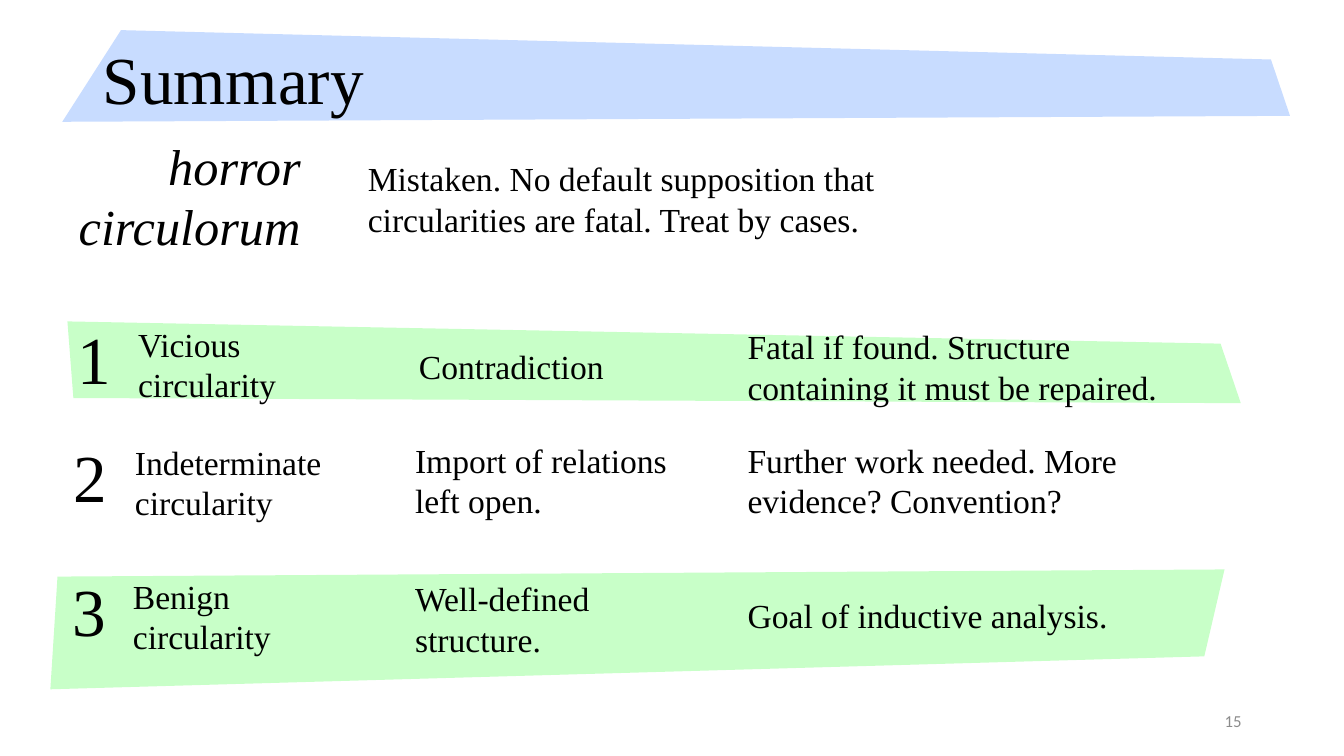
"""Build the summary slide on three kinds of circularity."""
from pptx import Presentation
from pptx.dml.color import RGBColor
from pptx.enum.text import MSO_ANCHOR, MSO_AUTO_SIZE, PP_ALIGN
from pptx.util import Cm, Pt

LEFT, RIGHT = PP_ALIGN.LEFT, PP_ALIGN.RIGHT
TOP, MIDDLE = MSO_ANCHOR.TOP, MSO_ANCHOR.MIDDLE
GROW, FIXED = MSO_AUTO_SIZE.SHAPE_TO_FIT_TEXT, MSO_AUTO_SIZE.NONE
COLOURS = {"header": "C8DCFF", "band": "C8FFC8", "text": "000000", "page": "8C8C8C"}
SERIF, SANS = "Times New Roman", "Calibri"

HEADER = [(3.05, 0.76), (32.03, 1.5), (32.51, 2.92), (1.57, 3.07)]
TITLE = ("Summary", (2.34, 1.02, 21.59, 2.13))
PAGE_NUMBER = ("15", (29.74, 17.65, 1.8, 1.02))
TOPIC = ("horror circulorum", (0.46, 3.28, 7.37, 3.33))
VERDICT = ("Mistaken. No default supposition that circularities are fatal. Treat by cases.",
           (9.02, 3.86, 15.85, 2.31))
CASES = [
    {"band": [(1.7, 8.1), (30.76, 8.66), (31.27, 10.16), (1.85, 10.03)],
     "number": ("1", (1.7, 7.87, 1.37, 2.31)),
     "cells": [("Vicious circularity", (3.23, 8.03, 4.95, 2.31)),
               ("Contradiction", (10.31, 8.59, 5.21, 1.27)),
               ("Fatal if found. Structure containing it must be repaired.",
                (18.59, 8.1, 12.04, 2.31))]},
    {"band": [],
     "number": ("2", (1.6, 10.85, 1.37, 2.31)),
     "cells": [("Indeterminate circularity", (3.15, 11, 5.54, 2.31)),
               ("Import of relations left open.", (10.21, 10.95, 7.19, 2.31)),
               ("Further work needed. More evidence? Convention?",
                (18.59, 10.95, 11.63, 2.31))]},
    {"band": [(1.27, 17.37), (30.35, 16.54), (30.86, 14.35), (1.45, 14.53)],
     "number": ("3", (1.57, 14.22, 1.37, 2.31)),
     "cells": [("Benign circularity", (3.1, 14.38, 5.54, 2.31)),
               ("Well-defined structure.", (10.21, 14.45, 7.19, 2.31)),
               ("Goal of inductive analysis.", (18.59, 14.86, 11.63, 1.27))]},
]


def set_all(target, values):
    for name, value in values.items():
        setattr(target, name, value)


def add_band(shapes, corners, colour):
    points = [(Cm(x), Cm(y)) for x, y in corners]
    builder = shapes.build_freeform(*points[0])
    builder.add_line_segments(points[1:], close=True)
    band = builder.convert_to_shape()
    band.shadow.inherit = False
    band.fill.solid()
    band.fill.fore_color.rgb = RGBColor.from_string(COLOURS[colour])
    band.line.fill.background()


def add_text(shapes, content, size=24, font=SERIF, colour="text", italic=False,
             align=LEFT, anchor=TOP, wrap=True, fit=GROW, spacing=1.0):
    text, place = content
    box = shapes.add_textbox(*map(Cm, place))
    set_all(box.text_frame, {"word_wrap": wrap, "auto_size": fit, "vertical_anchor": anchor})
    para = box.text_frame.paragraphs[0]
    set_all(para, {"alignment": align, "line_spacing": spacing})
    span = para.add_run()
    span.text = text
    set_all(span.font, {"name": font, "size": Pt(size), "italic": italic})
    span.font.color.rgb = RGBColor.from_string(COLOURS[colour])


def add_case(page, case):
    shapes = page.shapes.add_group_shape().shapes
    if case["band"]:
        add_band(shapes, case["band"], "band")
    add_text(shapes, case["number"], size=48, wrap=False)
    for cell in case["cells"]:
        add_text(shapes, cell)


def main():
    deck = Presentation()
    set_all(deck, {"slide_width": Cm(33.87), "slide_height": Cm(19.05)})
    page = deck.slides.add_slide(deck.slide_layouts[6])
    add_band(page.shapes, HEADER, "header")
    add_text(page.shapes, TITLE, size=48, anchor=MIDDLE, fit=FIXED, spacing=0.9)
    add_text(page.shapes, PAGE_NUMBER, size=12, font=SANS, colour="page",
             align=RIGHT, anchor=MIDDLE, fit=FIXED)
    add_text(page.shapes, TOPIC, size=36, italic=True, align=RIGHT)
    add_text(page.shapes, VERDICT)
    for case in CASES:
        add_case(page, case)
    deck.save("out.pptx")


if __name__ == "__main__":
    main()
